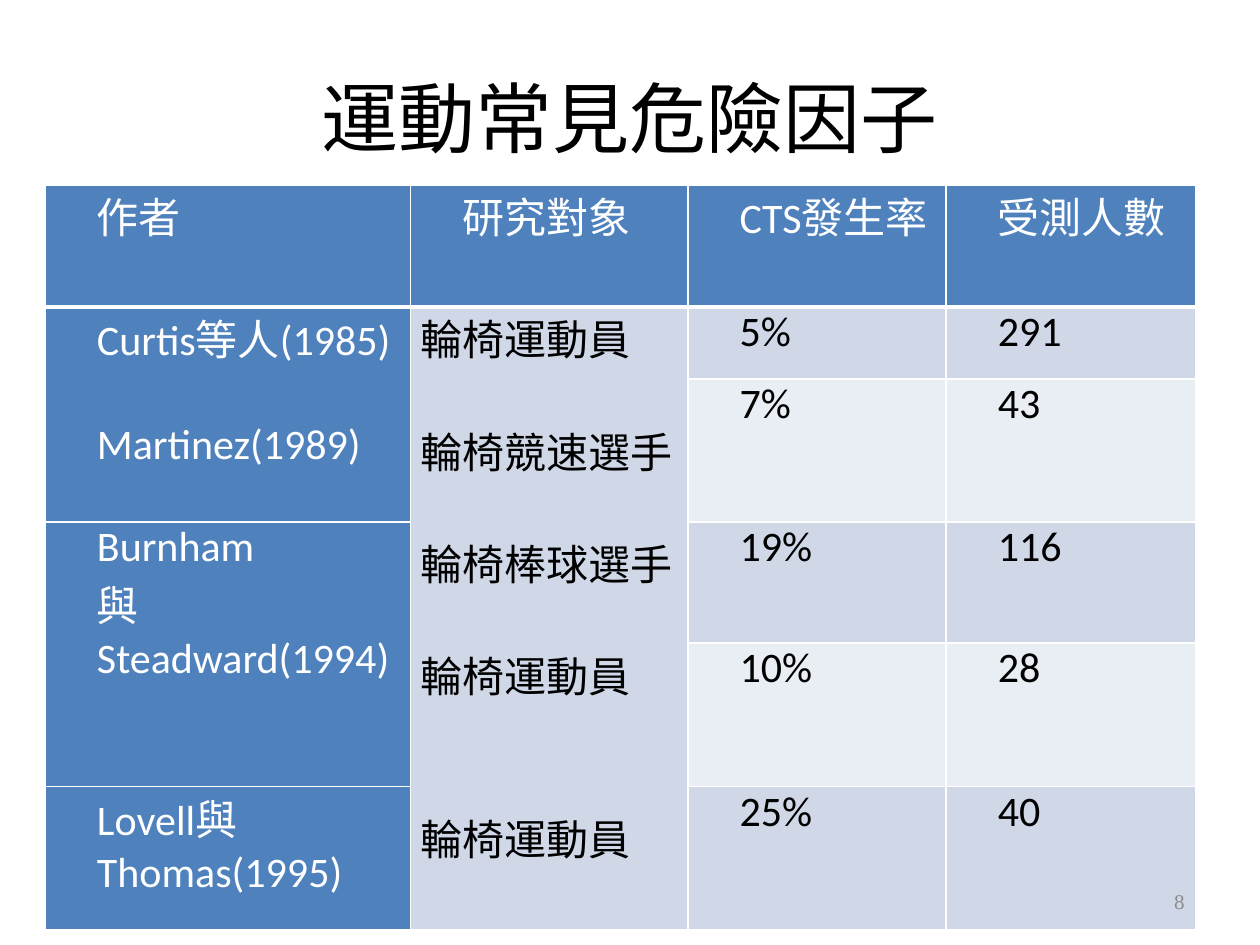
"""Build the slide on carpal tunnel syndrome rates among wheelchair athletes."""
from dataclasses import dataclass

from lxml.etree import SubElement
from pptx import Presentation
from pptx.dml.color import RGBColor
from pptx.enum.text import MSO_ANCHOR, PP_ALIGN
from pptx.oxml.ns import qn
from pptx.util import Inches, Pt


@dataclass(frozen=True)
class Theme:
    accent: str = "4F81BD"
    dark_band: str = "D0D8E8"
    light_band: str = "E9EDF4"
    white: str = "FFFFFF"
    black: str = "000000"
    grey: str = "8C8C8C"
    body_font: str = "Calibri"
    title_font: str = "Times New Roman"
    title_size: float = 44
    body_size: float = 24
    number_size: float = 12
    blank_line: float = 29.3


@dataclass(frozen=True)
class Entry:
    row: int
    column: int
    lines: tuple[str, ...]
    rows_spanned: int = 1
    gaps: tuple[int, ...] = ()


THEME = Theme()
COLUMN_WIDTHS = (2.9, 2.2, 2.05, 1.98)
ROW_HEIGHTS = (0.71, 0.57, 0.72, 0.96, 1.14, 1.14)
HEADINGS = ("作者", "研究對象", "CTS發生率", "受測人數")
RESULTS = (("5%", "291"), ("7%", "43"), ("19%", "116"), ("10%", "28"), ("25%", "40"))
AUTHORS = (
    Entry(1, 0, ("Curtis等人(1985)", "Martinez(1989)"), 2, (0, 1)),
    Entry(3, 0, ("Burnham", "與Steadward(1994)"), 2),
    Entry(5, 0, ("Lovell與Thomas(1995)",)),
)
SUBJECTS = Entry(
    1, 1,
    ("輪椅運動員", "輪椅競速選手", "輪椅棒球選手", "輪椅運動員", "輪椅運動員"),
    5, (0, 1, 1, 1, 2),
)


def write(frame, lines: tuple[str, ...], *, size: float, color: str, font: str,
          align=PP_ALIGN.LEFT, indent: float = 0, gaps: tuple[int, ...] = ()) -> None:
    """Write formatted lines, with gaps counted in blank lines above each."""
    frame.word_wrap = True
    for index, line in enumerate(lines):
        paragraph = frame.paragraphs[0] if index == 0 else frame.add_paragraph()
        paragraph.alignment = align
        if indent:
            paragraph._p.get_or_add_pPr().set("marL", str(Inches(indent)))
        if gaps and gaps[index]:
            paragraph.space_before = Pt(gaps[index] * THEME.blank_line)
        run = paragraph.add_run()
        run.text = line
        run.font.size = Pt(size)
        run.font.name = font
        run.font.bold = False
        run.font.color.rgb = RGBColor.from_string(color)


def place(box, left: float, top: float, width: float, height: float) -> None:
    """Set the position and size of a shape in inches."""
    box.left, box.top = Inches(left), Inches(top)
    box.width, box.height = Inches(width), Inches(height)


def fill_color(row: int, column: int) -> str:
    """Return the fill for a cell by its heading, subject or band role."""
    if row == 0 or column == 0:
        return THEME.accent
    return THEME.dark_band if column == 1 or row % 2 else THEME.light_band


def style_cell(cell, row: int, column: int) -> None:
    """Give a cell its margins, white borders and fill."""
    cell.margin_left = cell.margin_right = Inches(0.08)
    cell.margin_top = cell.margin_bottom = 0
    cell.vertical_anchor = MSO_ANCHOR.TOP
    properties = cell._tc.get_or_add_tcPr()
    for side in ("lnL", "lnR", "lnT", "lnB"):
        weight = 3 if row == 0 and side == "lnB" else 1
        border = SubElement(properties, qn(f"a:{side}"), w=str(Pt(weight)))
        SubElement(SubElement(border, qn("a:solidFill")), qn("a:srgbClr"), val=THEME.white)
    cell.fill.solid()
    cell.fill.fore_color.rgb = RGBColor.from_string(fill_color(row, column))


def write_entry(table, entry: Entry) -> None:
    """Merge the rows an entry spans and write its lines."""
    cell = table.cell(entry.row, entry.column)
    if entry.rows_spanned > 1:
        cell.merge(table.cell(entry.row + entry.rows_spanned - 1, entry.column))
    on_accent = fill_color(entry.row, entry.column) == THEME.accent
    is_subject = entry.row > 0 and entry.column == 1
    write(cell.text_frame, entry.lines, size=THEME.body_size, font=THEME.body_font,
          color=THEME.white if on_accent else THEME.black,
          indent=0 if is_subject else 0.33, gaps=entry.gaps)


def add_study_table(slide) -> None:
    """Add the table of studies, subjects, rates and sample sizes."""
    table = slide.shapes.add_table(
        len(ROW_HEIGHTS), len(COLUMN_WIDTHS),
        Inches(0.36), Inches(1.47), Inches(9.14), Inches(5.23)).table
    for column, width in zip(table.columns, COLUMN_WIDTHS):
        column.width = Inches(width)
    for row, height in zip(table.rows, ROW_HEIGHTS):
        row.height = Inches(height)
    for row in range(len(ROW_HEIGHTS)):
        for column in range(len(COLUMN_WIDTHS)):
            style_cell(table.cell(row, column), row, column)
    headings = [Entry(0, column, (text,)) for column, text in enumerate(HEADINGS)]
    results = [Entry(row, column, (text,))
               for row, pair in enumerate(RESULTS, 1)
               for column, text in enumerate(pair, 2)]
    for entry in (*headings, *AUTHORS, SUBJECTS, *results):
        write_entry(table, entry)


def main() -> None:
    """Build and save the presentation."""
    presentation = Presentation()
    presentation.slide_width, presentation.slide_height = Inches(10), Inches(7.5)
    slide = presentation.slides.add_slide(presentation.slide_layouts[5])
    title = slide.shapes.title
    place(title, 0.5, 0.3, 9, 1.25)
    title.text_frame.vertical_anchor = MSO_ANCHOR.MIDDLE
    write(title.text_frame, ("運動常見危險因子",), size=THEME.title_size,
          color=THEME.black, font=THEME.title_font, align=PP_ALIGN.CENTER)
    add_study_table(slide)
    page_number = slide.shapes.add_textbox(0, 0, 0, 0)
    place(page_number, 7.17, 6.95, 2.33, 0.4)
    page_number.text_frame.vertical_anchor = MSO_ANCHOR.MIDDLE
    write(page_number.text_frame, ("8",), size=THEME.number_size,
          color=THEME.grey, font=THEME.title_font, align=PP_ALIGN.RIGHT)
    presentation.save("out.pptx")


if __name__ == "__main__":
    main()
